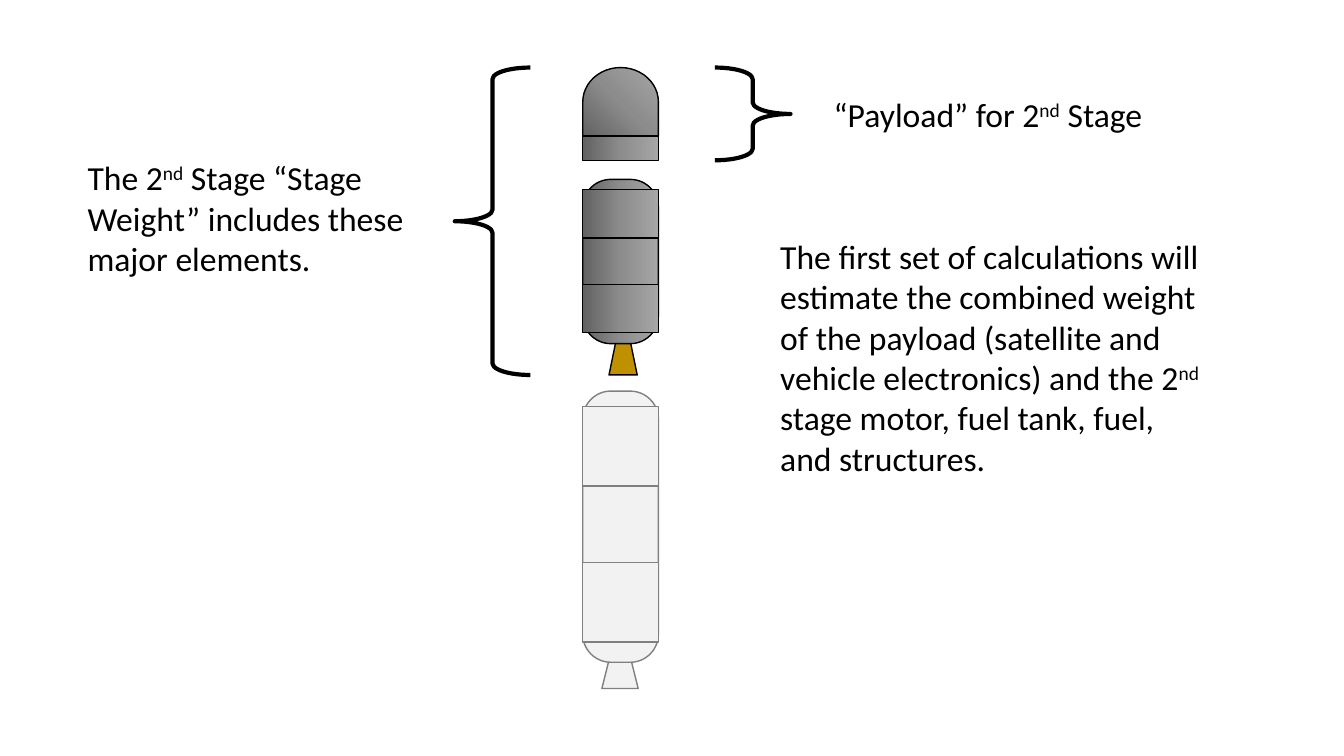
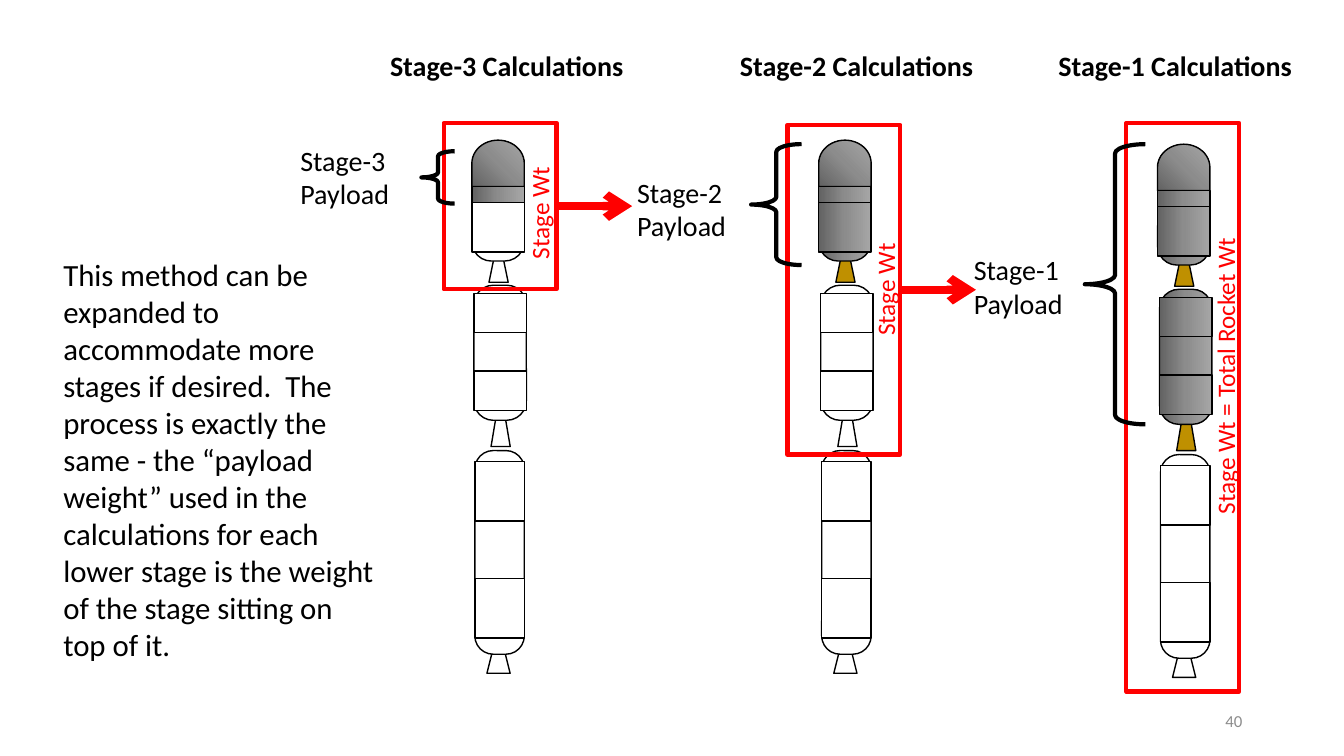
from copy import deepcopy

from lxml.etree import SubElement
from pptx import Presentation
from pptx.dml.color import RGBColor
from pptx.enum.shapes import MSO_CONNECTOR, MSO_SHAPE as SHAPE
from pptx.enum.text import MSO_ANCHOR, PP_ALIGN
from pptx.oxml.ns import qn
from pptx.util import Inches, Pt

FONT = "Calibri"
BLACK, WHITE, RED, GOLD = "000000", "FFFFFF", "FF0000", "BF9000"
GHOST_FILL, GHOST_LINE, NUMBER_GREY = "F2F2F2", "808080", "8C8C8C"
STEEL = (("626262", 0), ("8C8C8C", 0.5), ("A6A6A6", 1))

# A finish is fill, nozzle fill and outline
ACTIVE = (STEEL, GOLD, BLACK)
EMPTY = (WHITE, WHITE, BLACK)
GHOST = (GHOST_FILL, GHOST_FILL, GHOST_LINE)


def rgb(value):
    return RGBColor.from_string(value)


def turned(box):
    """Frame that covers box once it is rotated by a quarter turn."""
    x, y, w, h = box
    return x + (w - h) / 2, y + (h - w) / 2, h, w


def paint_steel(fill, angle):
    fill.gradient()
    fill.gradient_angle = -angle % 360
    first = fill.gradient_stops[0]._gs
    first.addnext(deepcopy(first))
    for stop, (color, position) in zip(fill.gradient_stops, STEEL):
        stop.color.rgb = rgb(color)
        stop.position = position


def add_part(slide, kind, box, fill, line=BLACK, weight=1, angle=0):
    part = slide.shapes.add_shape(kind, *map(Inches, box))
    part.shadow.inherit = False
    if fill is None:
        part.fill.background()
    elif fill is STEEL:
        paint_steel(part.fill, angle)
    else:
        part.fill.solid()
        part.fill.fore_color.rgb = rgb(fill)
    part.line.color.rgb = rgb(line)
    part.line.width = Pt(weight)
    return part


def add_text(slide, box, text, size, color=BLACK, bold=False):
    """Place text; pieces between ^ marks are superscript."""
    label = slide.shapes.add_textbox(*map(Inches, box))
    label.text_frame.word_wrap = True
    paragraph = label.text_frame.paragraphs[0]
    for i, piece in enumerate(text.split("^")):
        run = paragraph.add_run()
        run.text = piece
        if i % 2:
            run._r.get_or_add_rPr().set("baseline", "30000")
    font = paragraph.font
    font.name, font.size, font.bold = FONT, Pt(size), bold
    font.color.rgb = rgb(color)
    return label


def add_brace(slide, box, rotation=0):
    brace = add_part(slide, SHAPE.LEFT_BRACE, box, None, weight=3)
    brace.adjustments[0] = 0.153
    brace.rotation = rotation


def add_payload(slide, x, y, width, nose_height, ring_height):
    """Rounded nose over an electronics ring."""
    nose = add_part(slide, SHAPE.FLOWCHART_DELAY,
                    turned((x, y, width, nose_height)), STEEL, angle=45)
    nose.rotation = 270
    ring = (x, y + nose_height, width, ring_height)
    add_part(slide, SHAPE.RECTANGLE, ring, STEEL)


def add_stage(slide, box, nozzle, bands, band_height, finish):
    """Tank with bands and a nozzle, all offset from the tank's corner."""
    x, y, width, _ = box
    fill, nozzle_fill, line = finish
    dx, dy, nozzle_width, nozzle_height = nozzle
    add_part(slide, SHAPE.TRAPEZOID,
             (x + dx, y + dy, nozzle_width, nozzle_height), nozzle_fill, line)
    tank = add_part(slide, SHAPE.ROUNDED_RECTANGLE, box, fill, line)
    tank.adjustments[0] = 0.371
    for offset in bands:
        add_part(slide, SHAPE.RECTANGLE,
                 (x, y + offset, width, band_height), fill, line)


def add_three_stage_rocket(slide, x, y, finishes):
    """Finishes run from the third stage down to the first."""
    third, second, first = finishes
    add_stage(slide, (x, y + 0.63, 0.52, 0.57), (0.17, 0.55, 0.19, 0.23),
              [-0.03], 0.51, third)
    add_payload(slide, x, y, 0.52, 0.46, 0.16)
    add_stage(slide, (x + 0.02, y + 1.44, 0.52, 1.34),
              (0.17, 1.32, 0.19, 0.28), [0.08, 0.85], 0.39, second)
    add_stage(slide, (x + 0.03, y + 3.08, 0.49, 2.02),
              (0.12, 1.98, 0.23, 0.23), [0.11, 1.27], 0.59, first)


def add_arrow(slide, frame, length):
    """Red arrow leaving the middle of the frame's right side."""
    x, y = frame.left + frame.width, frame.top + frame.height // 2
    arrow = slide.shapes.add_connector(
        MSO_CONNECTOR.STRAIGHT, x, y, x + Inches(length), y)
    arrow.begin_connect(frame, 3)
    arrow.line.color.rgb = rgb(RED)
    arrow.line.width = Pt(6)
    SubElement(arrow.line._get_or_add_ln(), qn("a:tailEnd"), type="arrow")
    SubElement(arrow._element.spPr, qn("a:effectLst"))


def add_calculation(slide, heading_x, rocket, finishes, frame_box, brace_box,
                    payload_at, number, weight_box, weight_text):
    """One column: heading, rocket, red stage frame and payload brace."""
    add_three_stage_rocket(slide, *rocket, finishes)
    frame = add_part(slide, SHAPE.RECTANGLE, frame_box, None, RED, 3)
    add_brace(slide, brace_box)
    add_text(slide, (*payload_at, 1.3, 0.77), f"Stage-{number} Payload", 20)
    add_text(slide, (heading_x, 0.43, 2.54, 0.44),
             f"Stage-{number} Calculations", 20, bold=True)
    weight = add_text(slide, turned(weight_box), weight_text, 18, RED)
    weight.rotation = 270
    return frame


def build_second_stage_slide(slide):
    # Rocket
    x, width = 5.78, 0.75
    add_stage(slide, (x, 1.78, width, 1.63), (0.26, 1.6, 0.28, 0.34),
              [0.1, 1.04], 0.48, ACTIVE)
    add_stage(slide, (x, 3.88, width, 2.69), (0.19, 2.64, 0.36, 0.31),
              [0.15, 1.7], 0.79, GHOST)
    add_payload(slide, x, 0.67, width, 0.68, 0.24)

    # Braces and explanations
    add_brace(slide, (4.51, 0.67, 0.75, 3.05))
    add_brace(slide, (7.09, 0.67, 0.75, 0.92), 180)
    add_text(slide, (8.17, 0.88, 3.4, 0.5), "“Payload” for 2^nd^ Stage", 24)
    add_text(slide, (0.77, 1.51, 3.4, 1.31),
             "The 2^nd^ Stage “Stage Weight” includes these major elements.",
             24)
    add_text(slide, (7.64, 2.29, 4.46, 2.52),
             "The first set of calculations will estimate the combined weight "
             "of the payload (satellite and vehicle electronics) and the "
             "2^nd^ stage motor, fuel tank, fuel, and structures.", 24)


def build_three_stage_slide(slide):
    # Calculation columns
    third = add_calculation(
        slide, 3.77, (4.68, 1.39), (EMPTY, EMPTY, EMPTY),
        (4.4, 1.22, 1.12, 1.65), (4.18, 1.5, 0.33, 0.52),
        (2.88, 1.37), 3, (5.15, 1.37, 0.4, 1.3), "Stage Wt")
    second = add_calculation(
        slide, 7.24, (8.12, 1.39), (ACTIVE, EMPTY, EMPTY),
        (7.81, 1.24, 1.12, 3.27), (7.45, 1.43, 0.5, 1.2),
        (6.22, 1.69), 2, (8.58, 2.13, 0.4, 1.3), "Stage Wt")
    add_calculation(
        slide, 10.4, (11.48, 1.43), (ACTIVE, ACTIVE, EMPTY),
        (11.17, 1.22, 1.12, 5.64), (10.76, 1.43, 0.6, 2.78),
        (9.56, 2.46), 1, (11.95, 1.82, 0.4, 3.38),
        "Stage Wt = Total Rocket Wt")

    # Each stage weight becomes the next payload
    for frame in (third, second):
        add_arrow(slide, frame, 0.75)

    # Explanation and slide number
    add_text(slide, (0.53, 2.49, 3.33, 4.17),
             "This method can be expanded to accommodate more stages if "
             "desired.  The process is exactly the same - the “payload "
             "weight” used in the calculations for each lower stage is the "
             "weight of the stage sitting on top of it.", 22)
    number = add_text(slide, (9.42, 6.95, 3, 0.4), "40", 12, NUMBER_GREY)
    number.text_frame.vertical_anchor = MSO_ANCHOR.MIDDLE
    number.text_frame.paragraphs[0].alignment = PP_ALIGN.RIGHT


def main():
    deck = Presentation()
    deck.slide_width, deck.slide_height = Inches(13.33), Inches(7.5)
    blank = deck.slide_layouts[6]
    for build in (build_second_stage_slide, build_three_stage_slide):
        build(deck.slides.add_slide(blank))
    deck.save("out.pptx")


if __name__ == "__main__":
    main()
